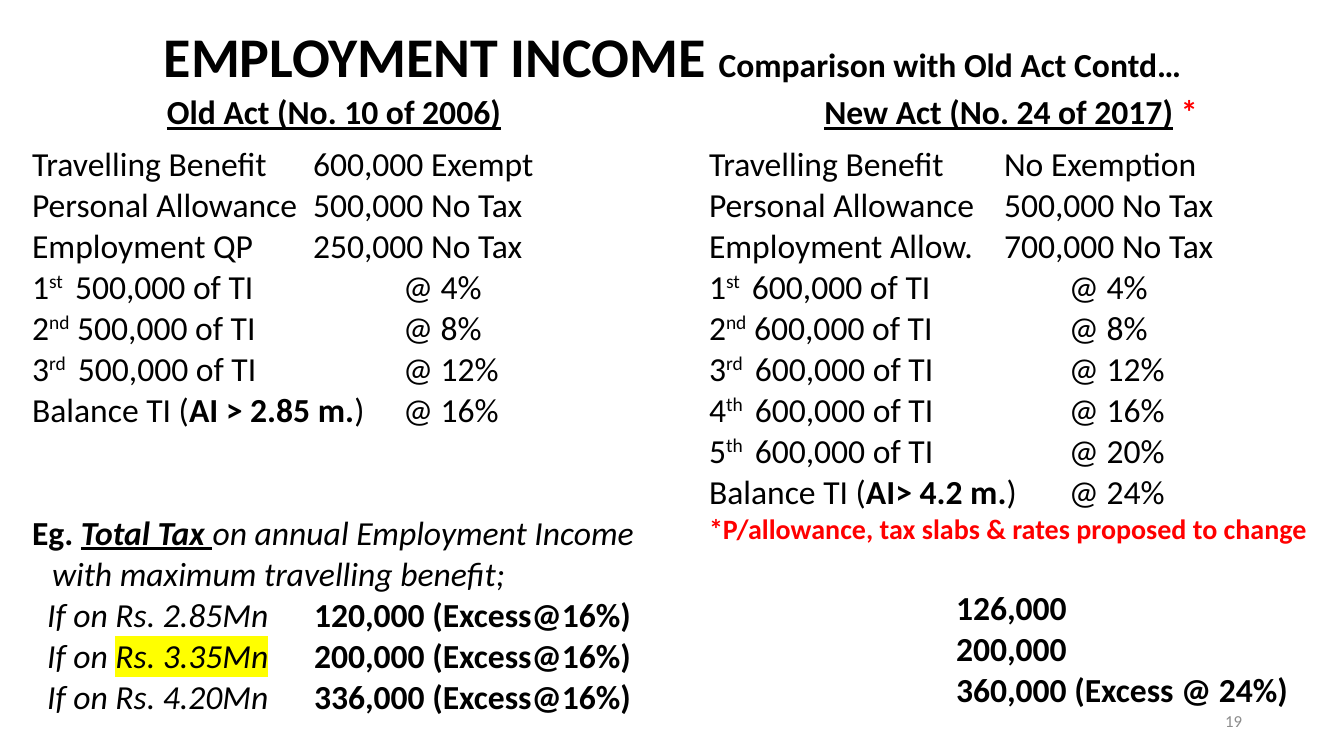
from lxml import etree
from pptx import Presentation
from pptx import util as u
from pptx.dml.color import RGBColor
from pptx.enum import text
from pptx.oxml.ns import qn

PX = 914400 / 100.8
COLORS = {"black": "000000", "red": "FF0000", "white": "FFFFFF",
          "grey": "8C8C8C", "yellow": "FFFF00"}


def px(length):
    return u.Emu(round(length * PX))


def add_spans(para, spans, size=24, color="black", tabs=()):
    """Add (wording, style) runs; style letters: b i u, s superscript, h highlight, r red."""
    if tabs:
        tab_list = etree.SubElement(para._p.get_or_add_pPr(), qn("a:tabLst"))
        for stop in tabs:
            etree.SubElement(tab_list, qn("a:tab"), pos=str(px(stop)), algn="l")
    for wording, style in spans:
        span = para.add_run()
        span.text = wording
        font = span.font
        font.size = u.Pt(size)
        font.bold, font.italic, font.underline = (k in style for k in "biu")
        font.color.rgb = RGBColor.from_string(COLORS["red" if "r" in style else color])
        props = span._r.get_or_add_rPr()
        if "s" in style:
            props.set("baseline", "30000")
        if "h" in style:
            mark = etree.SubElement(props, qn("a:highlight"))
            etree.SubElement(mark, qn("a:srgbClr"), val=COLORS["yellow"])
        font.name = "Calibri"


deck = Presentation()
deck.slide_width, deck.slide_height = px(1344), px(756)
page = deck.slides.add_slide(deck.slide_layouts[5])

title = page.shapes.title
title.left, title.top, title.width, title.height = px(35), px(17), px(1275), px(84)
title.text_frame.auto_size = text.MSO_AUTO_SIZE.NONE
title.text_frame.vertical_anchor = text.MSO_ANCHOR.MIDDLE
para = title.text_frame.paragraphs[0]
para.alignment = text.PP_ALIGN.CENTER
para.line_spacing = 0.9
add_spans(para, [("EMPLOYMENT INCOME ", "b")], 40)
add_spans(para, [("Comparison with Old Act Contd…", "b")])

widths, heights = (624, 27, 26, 624), (47, 545, 38)
table = page.shapes.add_table(3, 4, px(22), px(88), px(sum(widths)), px(sum(heights))).table
for column, width in zip(table.columns, widths):
    column.width = px(width)
for row, height in zip(table.rows, heights):
    row.height = px(height)
for cell in table.iter_cells():
    cell.fill.solid()
    cell.fill.fore_color.rgb = RGBColor.from_string(COLORS["white"])

headings = {0: [("Old Act (No. 10 of 2006)", "bu")],
            3: [("New Act (No. 24 of 2017)", "bu"), (" *", "br")]}
for column, spans in headings.items():
    para = table.cell(0, column).text_frame.paragraphs[0]
    para.alignment = text.PP_ALIGN.CENTER
    add_spans(para, spans)

# Each act: tab stop of amounts, tab stop of rates, reliefs, slab size, slabs, balance
acts = {
    0: (281, 371,
        [("Travelling Benefit", "600,000 Exempt"),
         ("Personal Allowance", "500,000 No Tax"),
         ("Employment QP", "250,000 No Tax")],
        "500,000", ["4%", "8%", "12%"], ("AI ˃ 2.85 m.", "16%")),
    3: (295, 360,
        [("Travelling Benefit", "No Exemption"),
         ("Personal Allowance", "500,000 No Tax"),
         ("Employment Allow.", "700,000 No Tax")],
        "600,000", ["4%", "8%", "12%", "16%", "20%"], ("AI˃ 4.2 m.", "24%")),
}
ordinals = ["st ", "nd", "rd ", "th ", "th "]
for column, (amount_tab, rate_tab, reliefs, slab, rates, balance) in acts.items():
    lines = [([(f"{label}\t{amount}", "")], amount_tab) for label, amount in reliefs]
    for number, (ordinal, rate) in enumerate(zip(ordinals, rates), 1):
        lines.append(([(str(number), ""), (ordinal, "s"),
                       (f" {slab} of TI\t@ {rate}", "")], rate_tab))
    limit, rate = balance
    lines.append(([("Balance TI (", ""), (limit, "b"), (f")\t@ {rate}", "")], rate_tab))
    frame = table.cell(1, column).text_frame
    for index, (spans, stop) in enumerate(lines):
        para = frame.add_paragraph() if index else frame.paragraphs[0]
        add_spans(para, spans, tabs=[stop])

old_act = table.cell(1, 0).text_frame
para = old_act.add_paragraph()
para.space_before = u.Pt(58.6)
props = para._p.get_or_add_pPr()
props.set("marL", str(px(20)))
props.set("indent", str(-px(20)))
add_spans(para, [("Eg. ", "b"), ("Total Tax ", "biu"),
                 ("on annual Employment Income with maximum travelling benefit;", "i")])
examples = [("Rs. 2.85Mn", "120,000", "i"), ("Rs. 3.35Mn", "200,000", "ih"),
            ("Rs. 4.20Mn", "336,000", "i")]
for income, tax, style in examples:
    add_spans(old_act.add_paragraph(),
              [("\tIf on ", "i"), (f"{income}\t", style), (f"{tax} (Excess@16%)", "b")],
              tabs=[15, 282])

new_act = table.cell(1, 3).text_frame
add_spans(new_act.add_paragraph(),
          [("*P/allowance, tax slabs & rates proposed to change", "br")], 20)
for index, tax in enumerate(["126,000", "200,000", "360,000 (Excess @ 24%)"]):
    para = new_act.add_paragraph()
    if index == 0:
        para.space_before = u.Pt(29.3)
    para._p.get_or_add_pPr().set("marL", str(px(247)))
    add_spans(para, [(tax, "b")])

number_box = page.shapes.add_textbox(px(950), px(701), px(302), px(40))
number_box.text_frame.word_wrap = True
number_box.text_frame.vertical_anchor = text.MSO_ANCHOR.MIDDLE
para = number_box.text_frame.paragraphs[0]
para.alignment = text.PP_ALIGN.RIGHT
add_spans(para, [("19", "")], 12, "grey")

deck.save("out.pptx")
